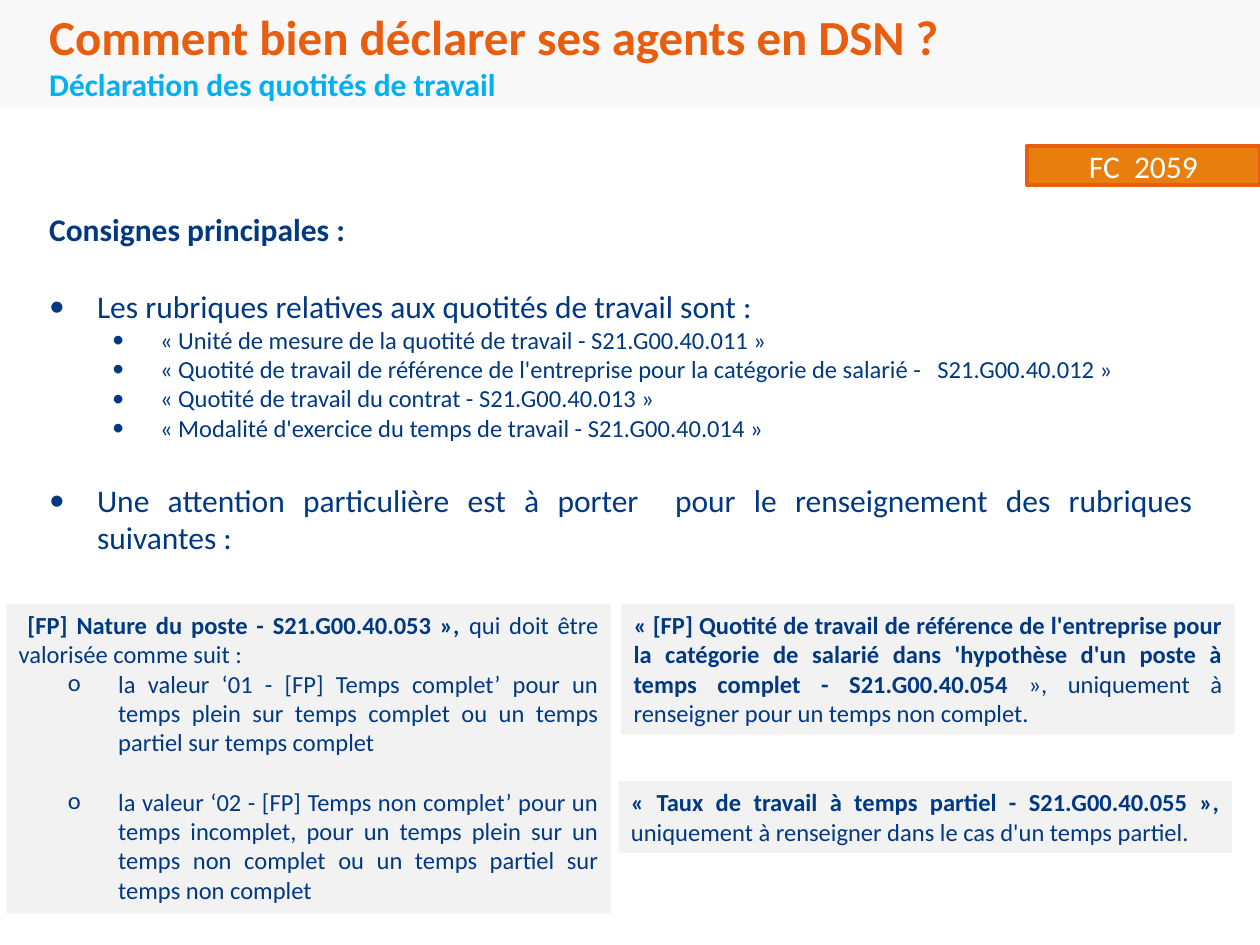
"""Build the slide on declaring working-time quotas in DSN."""
from copy import deepcopy

from lxml.etree import SubElement
from pptx import Presentation
from pptx.dml.color import RGBColor
from pptx.enum.shapes import MSO_SHAPE as Preset
from pptx.enum.text import MSO_ANCHOR as Anchor, MSO_AUTO_SIZE as Fit, PP_ALIGN as Align
from pptx.oxml.ns import qn
from pptx.util import Inches, Pt

COLOURS = {name: RGBColor.from_string(code) for name, code in {
    "orange": "E95D0F", "sky": "00B0F0", "navy": "003882", "white": "FFFFFF",
    "band": "F8F8F8", "panel": "F2F2F2", "tag": "E77E0E"}.items()}
THEME = {
    "title": dict(size=Pt(28), bold=True, colour="orange"),
    "subtitle": dict(size=Pt(18), bold=True, colour="sky"),
    "heading": dict(size=Pt(18), bold=True, colour="navy"),
    "lead": dict(size=Pt(18), bold=False, colour="navy"),
    "strong": dict(size=Pt(14), bold=True, colour="navy"),
    "text": dict(size=Pt(14), bold=False, colour="navy"),
    "tag": dict(size=Pt(18), bold=False, colour="white"),
}
LAYOUT = {
    "title": dict(align=Align.LEFT),
    "plain": dict(),
    "point": dict(bullet="•", margin=0.38, hanging=0.38, gap=22),
    "subpoint": dict(bullet="•", margin=0.88, hanging=0.38, level=1),
    "value": dict(bullet="o", margin=0.79, hanging=0.4, level=1),
    "next value": dict(bullet="o", margin=0.79, hanging=0.4, level=1, gap=17),
    "tag": dict(align=Align.CENTER),
}

deck = Presentation()
deck.slide_width, deck.slide_height = Inches(10), Inches(7.5)
COLUMN, ROW = deck.slide_width / 100, deck.slide_height / 75
slide = deck.slides.add_slide(deck.slide_layouts[1])


def place(shape, left, top, width, height):
    cells = dict(left=left * COLUMN, top=top * ROW, width=width * COLUMN, height=height * ROW)
    for side, length in cells.items():
        setattr(shape, side, round(length))


def write(shape, paragraphs, anchor=Anchor.TOP):
    frame = shape.text_frame
    for name, value in dict(word_wrap=True, auto_size=Fit.NONE, vertical_anchor=anchor).items():
        setattr(frame, name, value)
    for index, (layout, pieces) in enumerate(paragraphs):
        rule = LAYOUT[layout]
        paragraph = frame.paragraphs[0] if index == 0 else frame.add_paragraph()
        settings = dict(alignment=rule.get("align", Align.JUSTIFY), level=rule.get("level", 0),
                        space_before=Pt(rule.get("gap", 0)), space_after=Pt(0), line_spacing=1.0)
        for name, value in settings.items():
            setattr(paragraph, name, value)
        properties = paragraph._p.get_or_add_pPr()
        properties.set("marL", str(Inches(rule.get("margin", 0))))
        properties.set("indent", str(-Inches(rule.get("hanging", 0))))
        if "bullet" in rule:
            SubElement(properties, qn("a:buFont"), typeface="Calibri")
            SubElement(properties, qn("a:buChar"), char=rule["bullet"])
        else:
            SubElement(properties, qn("a:buNone"))
        for style, words in pieces:
            run = paragraph.add_run()
            run.text = words.rstrip("\n")
            look = THEME[style]
            for name, value in dict(name="Calibri", size=look["size"], bold=look["bold"]).items():
                setattr(run.font, name, value)
            run.font.color.rgb = COLOURS[look["colour"]]
            if words.endswith("\n"):
                paragraph.add_line_break()
                paragraph._p[-1].append(deepcopy(run._r.rPr))


title, body = slide.shapes.title, slide.placeholders[1]
place(title, 2.9, 0, 88, 7.1)
write(title, [("title", [("title", "Comment bien déclarer ses agents en DSN ?\n"),
                         ("subtitle", "Déclaration des quotités de travail")])])

rubrics = [
    "« Unité de mesure de la quotité de travail - S21.G00.40.011 »",
    "« Quotité de travail de référence de l'entreprise pour la catégorie de salarié -   S21.G00.40.012 » ",
    "« Quotité de travail du contrat - S21.G00.40.013 »",
    "« Modalité d'exercice du temps de travail - S21.G00.40.014 »",
]
place(body, 2.9, 16.2, 92.8, 31.6)
write(body, [
    ("plain", [("heading", "Consignes principales :")]),
    ("point", [("lead", "Les rubriques relatives aux quotités de travail sont :")]),
    *[("subpoint", [("text", rubric)]) for rubric in rubrics],
    ("point", [("lead", "Une attention particulière est à porter  pour le renseignement "
                        "des rubriques suivantes :")]),
])

job_type = [
    ("plain", [("strong", " [FP] Nature du poste - S21.G00.40.053 », "),
               ("text", "qui doit être valorisée comme suit :")]),
    ("value", [("text", "la valeur ‘01 - [FP] Temps complet’ pour un temps plein sur temps "
                        "complet ou un temps partiel sur temps complet")]),
    ("next value", [("text", "la valeur ‘02 - [FP] Temps non complet’ pour un temps incomplet, "
                             "pour un temps plein sur un temps non complet ou un temps partiel "
                             "sur temps non complet")]),
]
part_time_rate = [
    ("plain", [("strong", "« Taux de travail à temps partiel - S21.G00.40.055 », "),
               ("text", "uniquement à renseigner dans le cas d'un temps partiel.")]),
]
reference_quota = [
    ("plain", [("strong", "« [FP] Quotité de travail de référence de l'entreprise pour la "
                          "catégorie de salarié dans 'hypothèse d'un poste à temps complet - "
                          "S21.G00.40.054 "),
               ("text", "», uniquement à renseigner pour un temps non complet.")]),
]
form_tag = [("tag", [("tag", "FC  2059")])]

blocks = [
    ((0, 0, 100, 8.5), "band", None, []),
    ((0.5, 47.9, 48, 24.6), "panel", None, job_type),
    ((49.1, 62, 48.7, 5.7), "panel", None, part_time_rate),
    ((81.5, 11.6, 18.5, 3.1), "tag", "orange", form_tag),
    ((49.3, 47.9, 48.7, 10.4), "panel", None, reference_quota),
]
for cells, fill, outline, paragraphs in blocks:
    block = slide.shapes.add_shape(Preset.RECTANGLE, 0, 0, 0, 0)
    place(block, *cells)
    block.shadow.inherit = False
    block.fill.solid()
    block.fill.fore_color.rgb = COLOURS[fill]
    if outline:
        block.line.color.rgb = COLOURS[outline]
        block.line.width = Pt(2)
    else:
        block.line.fill.background()
    write(block, paragraphs, Anchor.MIDDLE if outline else Anchor.TOP)
    if fill == "band":
        slide.shapes._spTree.insert(2, block._element)

deck.save("out.pptx")
